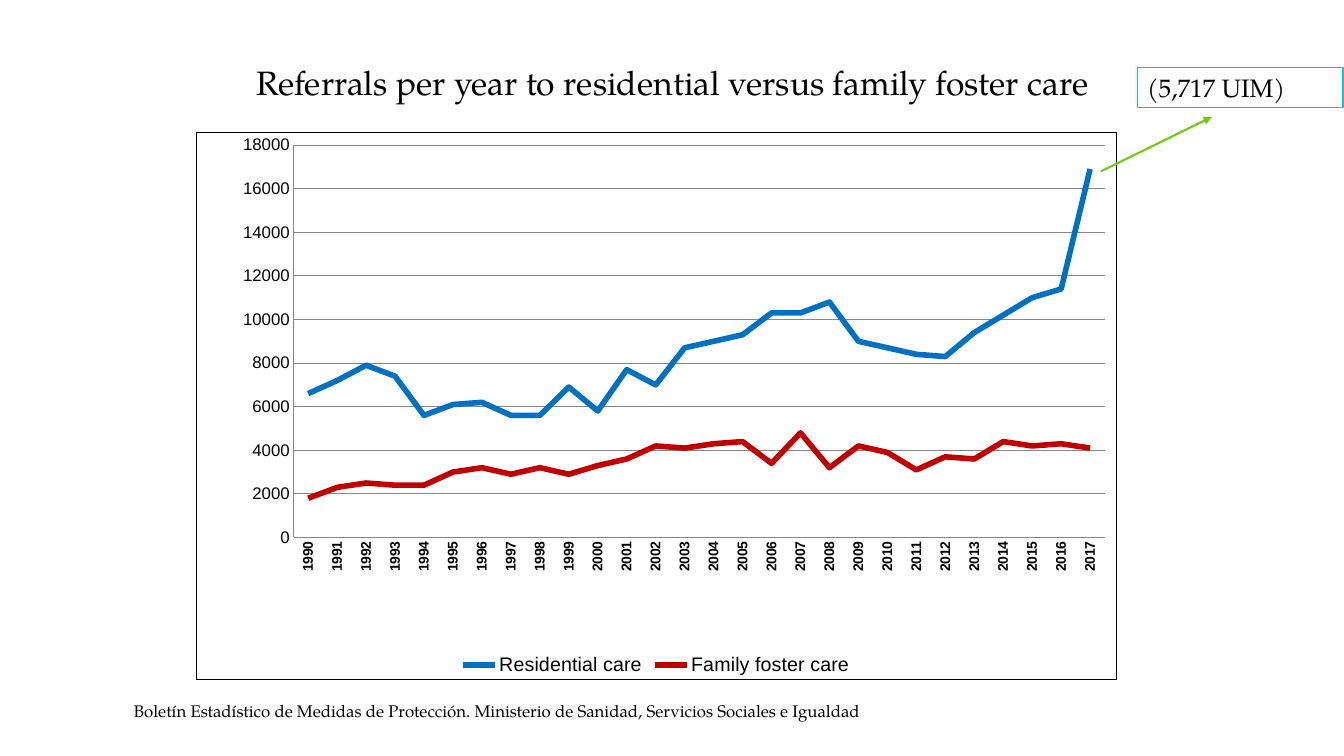
from dataclasses import dataclass

from pptx import Presentation
from pptx.chart.chart import Chart
from pptx.chart.data import CategoryChartData
from pptx.dml.color import RGBColor
from pptx.enum.chart import XL_CHART_TYPE, XL_LEGEND_POSITION, XL_MARKER_STYLE, XL_TICK_MARK
from pptx.enum.shapes import MSO_CONNECTOR, MSO_SHAPE
from pptx.enum.text import MSO_ANCHOR, MSO_AUTO_SIZE, PP_ALIGN
from pptx.oxml import parse_xml
from pptx.oxml.ns import nsdecls, qn
from pptx.slide import Slide
from pptx.text.text import Font, TextFrame
from pptx.util import Inches, Pt

LINE_CHART = XL_CHART_TYPE.LINE
NO_MARKER = XL_MARKER_STYLE.NONE
NO_TICK = XL_TICK_MARK.NONE
LEGEND_BOTTOM = XL_LEGEND_POSITION.BOTTOM
STRAIGHT = MSO_CONNECTOR.STRAIGHT
RECTANGLE = MSO_SHAPE.RECTANGLE
TOP, BOTTOM = MSO_ANCHOR.TOP, MSO_ANCHOR.BOTTOM
FIT_SHAPE = MSO_AUTO_SIZE.SHAPE_TO_FIT_TEXT
LEFT, CENTER = PP_ALIGN.LEFT, PP_ALIGN.CENTER

BLACK = RGBColor(0x00, 0x00, 0x00)
WHITE = RGBColor(0xFF, 0xFF, 0xFF)
GRAY = RGBColor(0x86, 0x86, 0x86)
BLUE = RGBColor(0x00, 0x70, 0xC0)
RED = RGBColor(0xC0, 0x00, 0x00)
TURQUOISE = RGBColor(0x08, 0xCA, 0xC1)
GREEN = RGBColor(0x76, 0xC7, 0x14)

SERIF = "TeX Gyre Pagella"
SANS = "Arial"


@dataclass(frozen=True)
class CareType:
    name: str
    color: RGBColor
    referrals: tuple[int, ...]


YEARS = [str(year) for year in range(1990, 2018)]
CARE_TYPES = (
    CareType("Residential care", BLUE, (
        6600, 7200, 7900, 7400, 5600, 6100, 6200, 5600, 5600, 6900,
        5800, 7700, 7000, 8700, 9000, 9300, 10300, 10300, 10800, 9000,
        8700, 8400, 8300, 9400, 10200, 11000, 11400, 16900)),
    CareType("Family foster care", RED, (
        1800, 2300, 2500, 2400, 2400, 3000, 3200, 2900, 3200, 2900,
        3300, 3600, 4200, 4100, 4300, 4400, 3400, 4800, 3200, 4200,
        3900, 3100, 3700, 3600, 4400, 4200, 4300, 4100)),
)


def format_font(font: Font, size: float, name: str = SERIF, bold: bool = False) -> None:
    font.name = name
    font.size = Pt(size)
    font.bold = bold
    font.color.rgb = BLACK


def write(frame: TextFrame, text: str, *, size: float, align: PP_ALIGN = LEFT,
          anchor: MSO_ANCHOR = TOP, spacing: float = 1.0,
          fit: MSO_AUTO_SIZE = FIT_SHAPE) -> None:
    frame.word_wrap = True
    frame.auto_size = fit
    frame.vertical_anchor = anchor
    paragraph = frame.paragraphs[0]
    paragraph.alignment = align
    paragraph.line_spacing = spacing
    run = paragraph.add_run()
    run.text = text
    format_font(run.font, size)


def frame_chart(chart: Chart) -> None:
    """Give the chart area its black border and the plot its fixed place."""
    chart_element = chart.element.find(qn("c:chart"))
    chart_element.addnext(parse_xml(
        f'<c:spPr {nsdecls("c", "a")}><a:noFill/><a:ln w="{Pt(0.75)}"><a:solidFill>'
        f'<a:srgbClr val="{BLACK}"/></a:solidFill></a:ln></c:spPr>'))
    plot_area = chart_element.find(qn("c:plotArea"))
    automatic = plot_area.find(qn("c:layout"))
    if automatic is not None:
        plot_area.remove(automatic)
    place = {"x": 0.106, "y": 0.023, "w": 0.881, "h": 0.717}
    sizes = "".join(f'<c:{key} val="{share}"/>' for key, share in place.items())
    plot_area.insert(0, parse_xml(
        f'<c:layout {nsdecls("c")}><c:manualLayout><c:layoutTarget val="inner"/>'
        f'<c:xMode val="edge"/><c:yMode val="edge"/>{sizes}</c:manualLayout></c:layout>'))


def add_referrals_chart(slide: Slide) -> None:
    referrals = CategoryChartData(number_format="General")
    referrals.categories = YEARS
    for care in CARE_TYPES:
        referrals.add_series(care.name, care.referrals)
    chart = slide.shapes.add_chart(
        LINE_CHART, Inches(1.94), Inches(1.31), Inches(9.14), Inches(5.44), referrals).chart
    chart.has_title = False
    format_font(chart.font, 18)
    frame_chart(chart)

    chart.plots[0].vary_by_categories = False
    for series, care in zip(chart.plots[0].series, CARE_TYPES):
        series.smooth = False
        series.marker.style = NO_MARKER
        series.format.line.color.rgb = care.color
        series.format.line.width = Pt(4)

    years, counts = chart.category_axis, chart.value_axis
    for axis in (years, counts):
        axis.major_tick_mark = axis.minor_tick_mark = NO_TICK
        axis.format.line.color.rgb = GRAY
        axis.format.line.width = Pt(0.75)
    format_font(years.tick_labels.font, 10, SANS, bold=True)
    format_font(counts.tick_labels.font, 12, SANS)
    chart.element.xpath(".//c:catAx/c:txPr/a:bodyPr")[0].set("rot", "-5400000")
    counts.minimum_scale, counts.maximum_scale, counts.major_unit = 0, 18000, 2000
    counts.major_gridlines.format.line.color.rgb = GRAY
    counts.major_gridlines.format.line.width = Pt(0.75)

    chart.has_legend = True
    chart.legend.position = LEGEND_BOTTOM
    chart.legend.include_in_layout = False
    format_font(chart.legend.font, 14, SANS)


def add_callout(slide: Slide) -> None:
    callout = slide.shapes.add_shape(
        RECTANGLE, Inches(11.28), Inches(0.67), Inches(2.04), Inches(0.4))
    callout.shadow.inherit = False
    callout.fill.solid()
    callout.fill.fore_color.rgb = WHITE
    callout.line.color.rgb = TURQUOISE
    callout.line.width = Pt(1)
    write(callout.text_frame, "(5,717 UIM)", size=18)

    arrow = slide.shapes.add_connector(
        STRAIGHT, Inches(10.92), Inches(1.7), Inches(12.02), Inches(1.16))
    arrow.line.color.rgb = GREEN
    arrow.line.width = Pt(1.5)
    arrow.line._get_or_add_ln().append(
        parse_xml(f'<a:tailEnd {nsdecls("a")} type="triangle"/>'))
    arrow._element.spPr.append(parse_xml(f'<a:effectLst {nsdecls("a")}/>'))


def main() -> None:
    deck = Presentation()
    deck.slide_width, deck.slide_height = Inches(13.33), Inches(7.5)
    slide = deck.slides.add_slide(deck.slide_layouts.get_by_name("Title Only"))

    add_referrals_chart(slide)

    source = slide.shapes.add_textbox(Inches(1.23), Inches(6.9), Inches(8.98), Inches(0.3))
    write(source.text_frame, "Boletín Estadístico de Medidas de Protección. "
          "Ministerio de Sanidad, Servicios Sociales e Igualdad", size=12)

    title = slide.shapes.title
    title.left, title.top = Inches(0.67), Inches(0.3)
    title.width, title.height = Inches(12), Inches(0.77)
    write(title.text_frame, "Referrals per year to residential versus family foster care",
          size=24, align=CENTER, anchor=BOTTOM, spacing=0.9, fit=MSO_AUTO_SIZE.NONE)

    add_callout(slide)
    deck.save("out.pptx")


if __name__ == "__main__":
    main()
